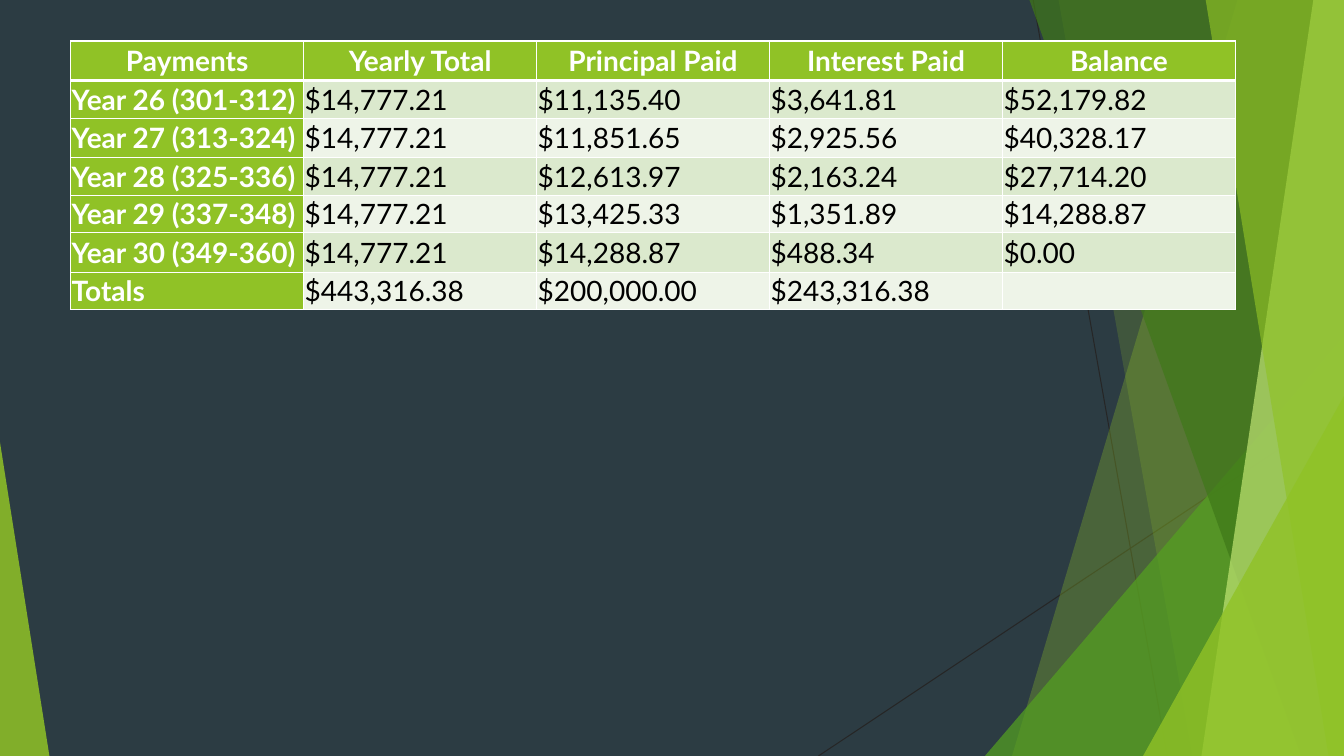
from dataclasses import dataclass

from lxml.etree import SubElement
from pptx import Presentation
from pptx.dml.color import RGBColor
from pptx.enum.shapes import MSO_CONNECTOR, MSO_SHAPE
from pptx.enum.text import MSO_ANCHOR, PP_ALIGN
from pptx.oxml.ns import qn
from pptx.util import Pt

WIDTH, HEIGHT = 960, 540
TOP = -0.7
FONT = "Lato"
COLORS = {
    "background": "2C3C43",
    "hairline": "262626",
    "lime": "90C226",
    "green": "54A021",
    "forest": "3F7819",
    "pale": "C0E474",
    "band_dark": "DBE9CD",
    "band_light": "EEF4E8",
    "white": "FFFFFF",
    "black": "000000",
}


@dataclass
class Hairline:
    start: tuple[float, float]
    end: tuple[float, float]


@dataclass
class Facet:
    """Panel running from two points on its slanted edge to the right side."""
    top_x: float
    bottom_x: float
    color: str
    opacity: int


@dataclass
class Corner:
    """Triangle standing on the slide's bottom edge."""
    left: float
    top: float
    width: float
    apex: float
    color: str
    opacity: int


HAIRLINES = [
    Hairline((738, 0), (833.8, HEIGHT)),
    Hairline((WIDTH, 290), (584.6, HEIGHT)),
]
DECORATION = [
    Facet(884.2, 722.9, "lime", 30),
    Facet(756, 851.8, "lime", 20),
    Corner(703.5, 240, 256.5, 1, "green", 72),
    Facet(735.1, 929.5, "forest", 70),
    Facet(938.2, 858.2, "pale", 70),
    Facet(861.1, 949, "lime", 65),
    Corner(816.5, 283, 143.5, 1, "lime", 80),
    Corner(0, 316, 35.3, 0, "lime", 85),
]

TABLE_LEFT, TABLE_TOP = 50.5, 29.3
COLUMN_WIDTH = 166.4
ROW_HEIGHTS = [28.2, 26.9, 28.2, 26.9, 26.9, 28.2, 26.9]
PAYMENTS = [
    ["Payments", "Yearly Total", "Principal Paid", "Interest Paid", "Balance"],
    ["Year 26 (301-312)", "$14,777.21", "$11,135.40", "$3,641.81", "$52,179.82"],
    ["Year 27 (313-324)", "$14,777.21", "$11,851.65", "$2,925.56", "$40,328.17"],
    ["Year 28 (325-336)", "$14,777.21", "$12,613.97", "$2,163.24", "$27,714.20"],
    ["Year 29 (337-348)", "$14,777.21", "$13,425.33", "$1,351.89", "$14,288.87"],
    ["Year 30 (349-360)", "$14,777.21", "$14,288.87", "$488.34", "$0.00"],
    ["Totals", "$443,316.38", "$200,000.00", "$243,316.38", ""],
]


def rgb(name: str) -> RGBColor:
    return RGBColor.from_string(COLORS[name])


def draw_hairline(slide, hairline: Hairline) -> None:
    points = [Pt(value) for value in (*hairline.start, *hairline.end)]
    connector = slide.shapes.add_connector(MSO_CONNECTOR.STRAIGHT, *points)
    connector.line.color.rgb = rgb("hairline")
    connector.line.width = Pt(0.75)
    SubElement(connector.element.spPr, qn("a:effectLst"))


def paint(shape, color: str, opacity: int) -> None:
    shape.shadow.inherit = False
    shape.line.fill.background()
    shape.fill.solid()
    shape.fill.fore_color.rgb = rgb(color)
    color_element = shape.element.spPr.find(qn("a:solidFill"))[0]
    SubElement(color_element, qn("a:alpha"), val=str(opacity * 1000))


def draw_facet(slide, facet: Facet) -> None:
    outline = [(WIDTH, TOP), (WIDTH, HEIGHT), (facet.bottom_x, HEIGHT)]
    builder = slide.shapes.build_freeform(Pt(facet.top_x), Pt(TOP))
    builder.add_line_segments([(Pt(x), Pt(y)) for x, y in outline], close=True)
    paint(builder.convert_to_shape(), facet.color, facet.opacity)


def draw_corner(slide, corner: Corner) -> None:
    shape = slide.shapes.add_shape(
        MSO_SHAPE.ISOSCELES_TRIANGLE, Pt(corner.left), Pt(corner.top),
        Pt(corner.width), Pt(HEIGHT - corner.top))
    shape.adjustments[0] = corner.apex
    paint(shape, corner.color, corner.opacity)


def set_borders(cell, top: float, bottom: float) -> None:
    properties = cell._tc.get_or_add_tcPr()
    widths = {"a:lnL": 1, "a:lnR": 1, "a:lnT": top, "a:lnB": bottom}
    for tag, width in widths.items():
        line = SubElement(properties, qn(tag), w=str(Pt(width)))
        fill = SubElement(line, qn("a:solidFill"))
        SubElement(fill, qn("a:srgbClr"), val=COLORS["white"])


def fill_cell(cell, text: str, row: int, column: int) -> None:
    heading = row == 0 or column == 0
    set_borders(cell, top=3 if row == 1 else 1, bottom=3 if row == 0 else 1)
    band = "band_dark" if row % 2 else "band_light"
    cell.fill.solid()
    cell.fill.fore_color.rgb = rgb("lime" if heading else band)
    cell.margin_left = cell.margin_right = Pt(0.75)
    cell.margin_top = cell.margin_bottom = Pt(0.75)
    cell.vertical_anchor = MSO_ANCHOR.MIDDLE
    if not text:
        return
    paragraph = cell.text_frame.paragraphs[0]
    paragraph.alignment = PP_ALIGN.CENTER if row == 0 else PP_ALIGN.LEFT
    run = paragraph.add_run()
    run.text = text
    run.font.name = FONT
    run.font.size = Pt(20)
    run.font.bold = heading
    run.font.color.rgb = rgb("white" if heading else "black")


def draw_payments(slide) -> None:
    column_count = len(PAYMENTS[0])
    table = slide.shapes.add_table(
        len(PAYMENTS), column_count, Pt(TABLE_LEFT), Pt(TABLE_TOP),
        Pt(COLUMN_WIDTH * column_count), Pt(sum(ROW_HEIGHTS))).table
    table.first_col = True
    for column in table.columns:
        column.width = Pt(COLUMN_WIDTH)
    for row, (height, values) in enumerate(zip(ROW_HEIGHTS, PAYMENTS)):
        table.rows[row].height = Pt(height)
        for column, text in enumerate(values):
            fill_cell(table.cell(row, column), text, row, column)


def main() -> None:
    presentation = Presentation()
    presentation.slide_width, presentation.slide_height = Pt(WIDTH), Pt(HEIGHT)
    slide = presentation.slides.add_slide(presentation.slide_layouts[6])
    slide.background.fill.solid()
    slide.background.fill.fore_color.rgb = rgb("background")

    # Faceted backdrop
    for hairline in HAIRLINES:
        draw_hairline(slide, hairline)
    for piece in DECORATION:
        if isinstance(piece, Facet):
            draw_facet(slide, piece)
        else:
            draw_corner(slide, piece)

    # Payment schedule
    draw_payments(slide)
    presentation.save("out.pptx")


if __name__ == "__main__":
    main()
